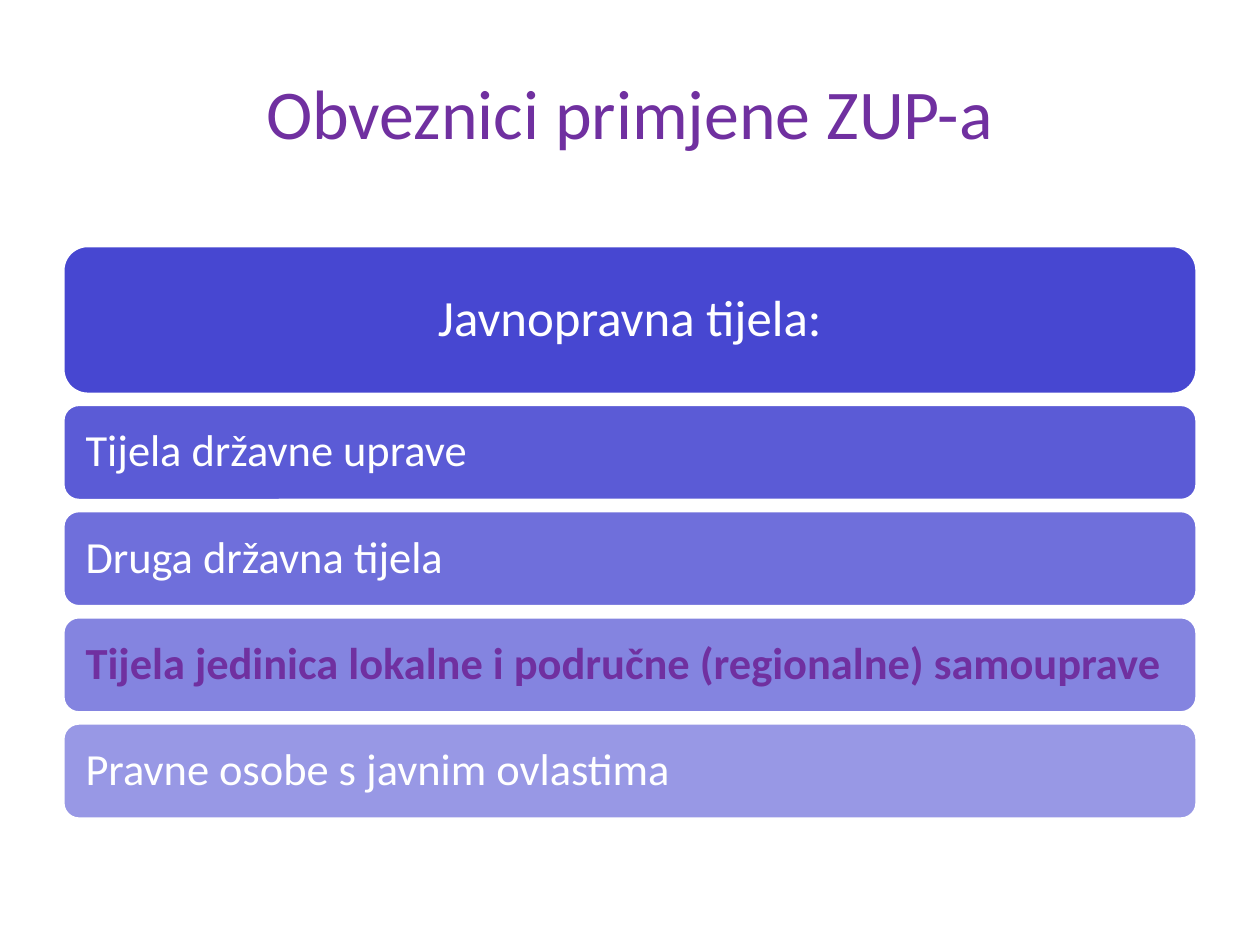
"""Build the slide listing the public bodies bound to apply the ZUP."""
from lxml import etree
from pptx import Presentation
from pptx.dml.color import RGBColor
from pptx.enum.shapes import MSO_SHAPE
from pptx.enum.text import MSO_ANCHOR, PP_ALIGN
from pptx.oxml.ns import qn
from pptx.util import Cm, Pt

ROUNDED = MSO_SHAPE.ROUNDED_RECTANGLE
MIDDLE = MSO_ANCHOR.MIDDLE
LEFT, CENTER = PP_ALIGN.LEFT, PP_ALIGN.CENTER

FONT = "Calibri"
PURPLE, WHITE, BLUE = "7030A0", "FFFFFF", "3333CC"

TITLE = "Obveznici primjene ZUP-a"
HEADING = "Javnopravna tijela:"
BODIES = [
    ("Tijela državne uprave", False),
    ("Druga državna tijela", False),
    ("Tijela jedinica lokalne i područne (regionalne) samouprave", True),
    ("Pravne osobe s javnim ovlastima", False),
]

MARGIN, WIDTH = 1.4, 25.2
TITLE_TOP, TITLE_HEIGHT = 0.84, 3.5
HEADING_TOP, HEADING_HEIGHT = 5.46, 3.3
BODIES_TOP, BODY_HEIGHT, BODY_STEP = 8.99, 2.13, 2.36


def color(value):
    return RGBColor.from_string(value)


def write(shape, text, size, text_color, align, inset=0, spacing=0.9, bold=False):
    frame = shape.text_frame
    frame.word_wrap = True
    frame.vertical_anchor = MIDDLE
    frame.margin_left = frame.margin_right = Cm(inset)
    frame.margin_top = frame.margin_bottom = Cm(inset)
    paragraph = frame.paragraphs[0]
    paragraph.text = text
    paragraph.alignment = align
    paragraph.line_spacing = spacing
    font = paragraph.font
    font.name, font.size, font.bold = FONT, Pt(size), bold
    font.color.rgb = color(text_color)


def add_bar(slide, top, height, opacity):
    bar = slide.shapes.add_shape(ROUNDED, Cm(MARGIN), Cm(top), Cm(WIDTH), Cm(height))
    bar.shadow.inherit = False
    bar.fill.solid()
    bar.fill.fore_color.rgb = color(BLUE)
    fill_color = bar.fill._xPr.find(qn("a:solidFill"))[0]
    etree.SubElement(fill_color, qn("a:alpha"), val=str(opacity * 1000))
    bar.line.color.rgb = color(WHITE)
    bar.line.width = Pt(2)
    return bar


def main():
    deck = Presentation()
    deck.slide_width, deck.slide_height = Cm(28), Cm(21)
    slide = deck.slides.add_slide(deck.slide_layouts[6])

    title = slide.shapes.add_textbox(Cm(MARGIN), Cm(TITLE_TOP), Cm(WIDTH), Cm(TITLE_HEIGHT))
    write(title, TITLE, 44, PURPLE, CENTER, spacing=0.93)

    heading = add_bar(slide, HEADING_TOP, HEADING_HEIGHT, 90)
    write(heading, HEADING, 32, WHITE, CENTER, inset=0.5)

    for row, (name, highlighted) in enumerate(BODIES):
        bar = add_bar(slide, BODIES_TOP + row * BODY_STEP, BODY_HEIGHT, 80 - 10 * row)
        text_color = PURPLE if highlighted else WHITE
        write(bar, name, 28, text_color, LEFT, inset=0.4, bold=highlighted)

    deck.save("out.pptx")


if __name__ == "__main__":
    main()
